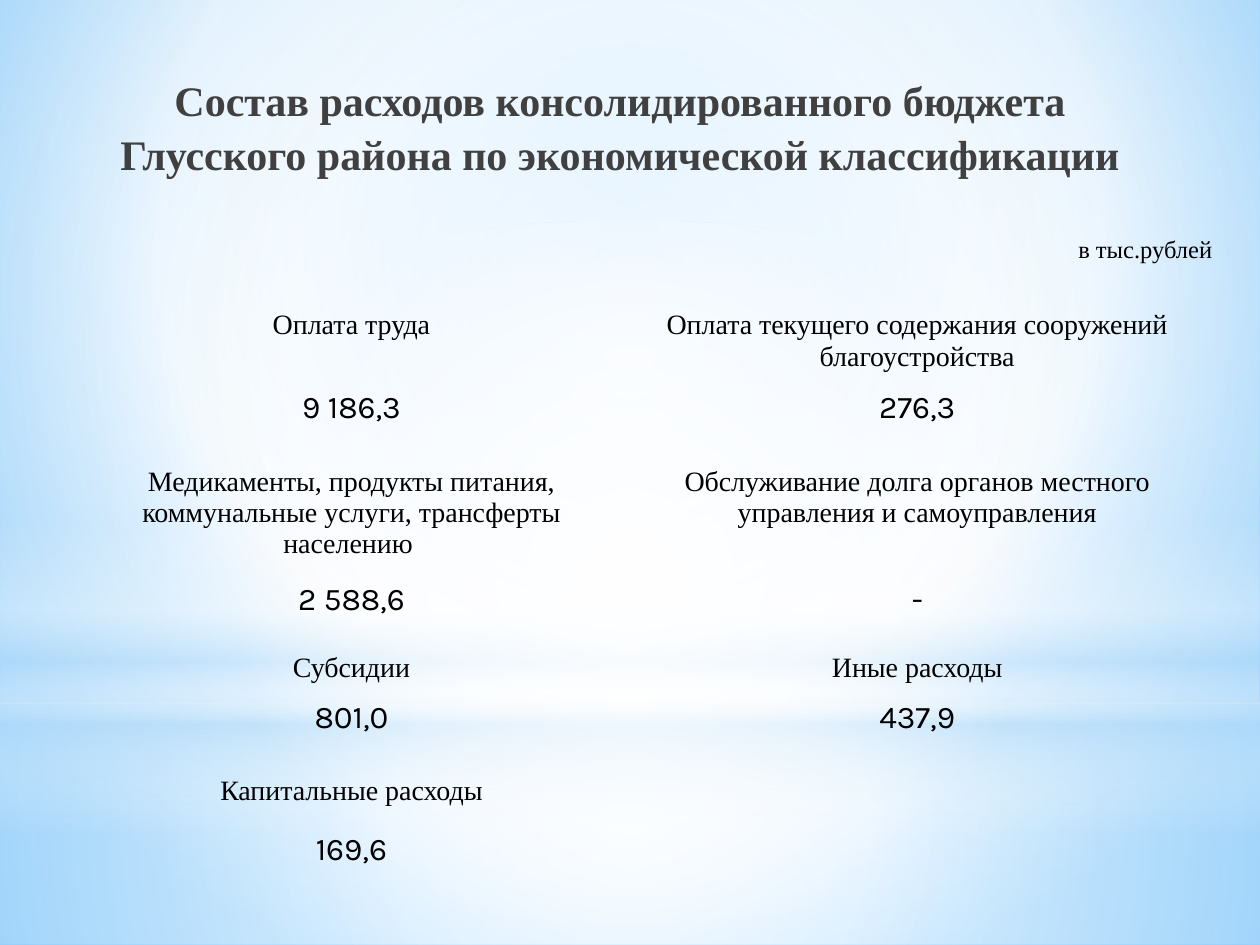
import pptx
import pptx.util
import pptx.dml.color
import pptx.enum.shapes
import pptx.enum.text
import pptx.oxml
import pptx.oxml.ns

theme = {
    "white": "FFFFFF", "pale": "B4DCFA", "sky": "9ED5FF", "blue": "5BB9FF",
    "title": "404040", "text": "000000",
    "serif": "Times New Roman", "sans": "Karla",
    "title_size": 24, "value_size": 18, "name_size": 16, "unit_size": 14,
}

presentation = pptx.Presentation()
presentation.slide_width = pptx.util.Inches(10)
presentation.slide_height = pptx.util.Inches(7.5)
column = presentation.slide_width / 100
row = presentation.slide_height / 100
slide = presentation.slides.add_slide(presentation.slide_layouts[6])


def paint_gradient(properties, stops, focus):
    stop_list = "".join(
        f'<a:gs pos="{position * 1000}"><a:srgbClr val="{theme[color]}">'
        f'<a:alpha val="{alpha * 1000}"/></a:srgbClr></a:gs>'
        for position, color, alpha in stops
    )
    if focus:
        sides = " ".join(f'{side}="{share * 1000}"' for side, share in zip("ltrb", focus))
        direction = f'<a:path path="circle"><a:fillToRect {sides}/></a:path>'
    else:
        direction = '<a:lin ang="5400000" scaled="0"/>'
    gradient = pptx.oxml.parse_xml(
        f'<a:gradFill {pptx.oxml.ns.nsdecls("a")} rotWithShape="1">'
        f"<a:gsLst>{stop_list}</a:gsLst>{direction}</a:gradFill>"
    )
    properties.replace(properties.find(pptx.oxml.ns.qn("a:solidFill")), gradient)


def write_text(paragraph, text, size, font, color="text", bold=False):
    run = paragraph.add_run()
    run.text = text
    run.font.size = pptx.util.Pt(theme[size])
    run.font.name = theme[font]
    run.font.bold = bold
    run.font.color.rgb = pptx.dml.color.RGBColor.from_string(theme[color])


slide.background.fill.solid()
paint_gradient(
    slide.element.find(".//" + pptx.oxml.ns.qn("p:bgPr")),
    [(0, "sky", 100), (60, "white", 100), (100, "blue", 100)],
    (20, 10, 20, 60),
)

center = (50, 50, 50, 50)
rectangle = pptx.enum.shapes.MSO_SHAPE.RECTANGLE
oval = pptx.enum.shapes.MSO_SHAPE.OVAL
glows = [
    (rectangle, 74.4, 25.6, center, [(0, "white", 91), (37, "white", 76), (100, "pale", 79)]),
    (rectangle, 0, 74.4, center, [(0, "white", 89), (48, "white", 62), (100, "pale", 79)]),
    (rectangle, 55, 33.33, None, [(0, "white", 0), (29, "white", 30), (45, "pale", 40),
                                  (55, "white", 26), (65, "pale", 60), (100, "white", 0)]),
    (oval, 23.33, 74.4, center, [(0, "white", 100), (56, "white", 0)]),
]
for kind, top, height, focus, stops in glows:
    shape = slide.shapes.add_shape(
        kind, 0, int(top * row), presentation.slide_width, int(height * row))
    shape.shadow.inherit = False
    shape.line.fill.background()
    shape.fill.solid()
    paint_gradient(shape.element.spPr, stops, focus)

title = slide.shapes.add_textbox(
    int(5.1 * column), int(6.93 * row), int(88.2 * column), int(13.6 * row))
title.text_frame.word_wrap = True
paragraph = title.text_frame.paragraphs[0]
paragraph.alignment = pptx.enum.text.PP_ALIGN.CENTER
paragraph.line_spacing = 1.06
write_text(
    paragraph,
    "Состав расходов консолидированного бюджета Глусского района по экономической классификации",
    "title_size", "serif", "title", True,
)

expenses = [
    ("Оплата труда", "Оплата текущего содержания сооружений благоустройства"),
    ("9 186,3", "276,3"),
    ("Медикаменты, продукты питания, коммунальные услуги, трансферты населению ",
     "Обслуживание долга органов местного управления и самоуправления"),
    ("2 588,6", "-"),
    ("Субсидии", "Иные расходы"),
    ("801,0", "437,9"),
    ("Капитальные расходы", ""),
    ("169,6", ""),
]
column_widths = [45.6, 44.2]
row_heights = [8.4, 8.13, 12.13, 7.6, 4.8, 8.13, 5.87, 8.67]
frame = slide.shapes.add_table(
    len(expenses), len(column_widths), int(5.1 * column), int(32.13 * row),
    int(sum(column_widths) * column), int(sum(row_heights) * row))
table = frame.table
table.first_row = False
table.horz_banding = False
style = table._tbl.tblPr.find(pptx.oxml.ns.qn("a:tableStyleId"))
style.text = "{2D5ABB26-0587-4C30-8999-92F81FD0307C}"
for table_column, width in zip(table.columns, column_widths):
    table_column.width = int(width * column)
for row_index, (texts, height) in enumerate(zip(expenses, row_heights)):
    table.rows[row_index].height = int(height * row)
    size, font = [("name_size", "serif"), ("value_size", "sans")][row_index % 2]
    for column_index, text in enumerate(texts):
        cell = table.cell(row_index, column_index)
        cell.fill.background()
        paragraph = cell.text_frame.paragraphs[0]
        paragraph.alignment = pptx.enum.text.PP_ALIGN.CENTER
        if text:
            write_text(paragraph, text, size, font)

unit = slide.shapes.add_textbox(
    int(84.6 * column), int(24.13 * row), int(13 * column), int(4.8 * row))
unit.text_frame.word_wrap = False
write_text(unit.text_frame.paragraphs[0], "в тыс.рублей", "unit_size", "serif")

presentation.save("out.pptx")
